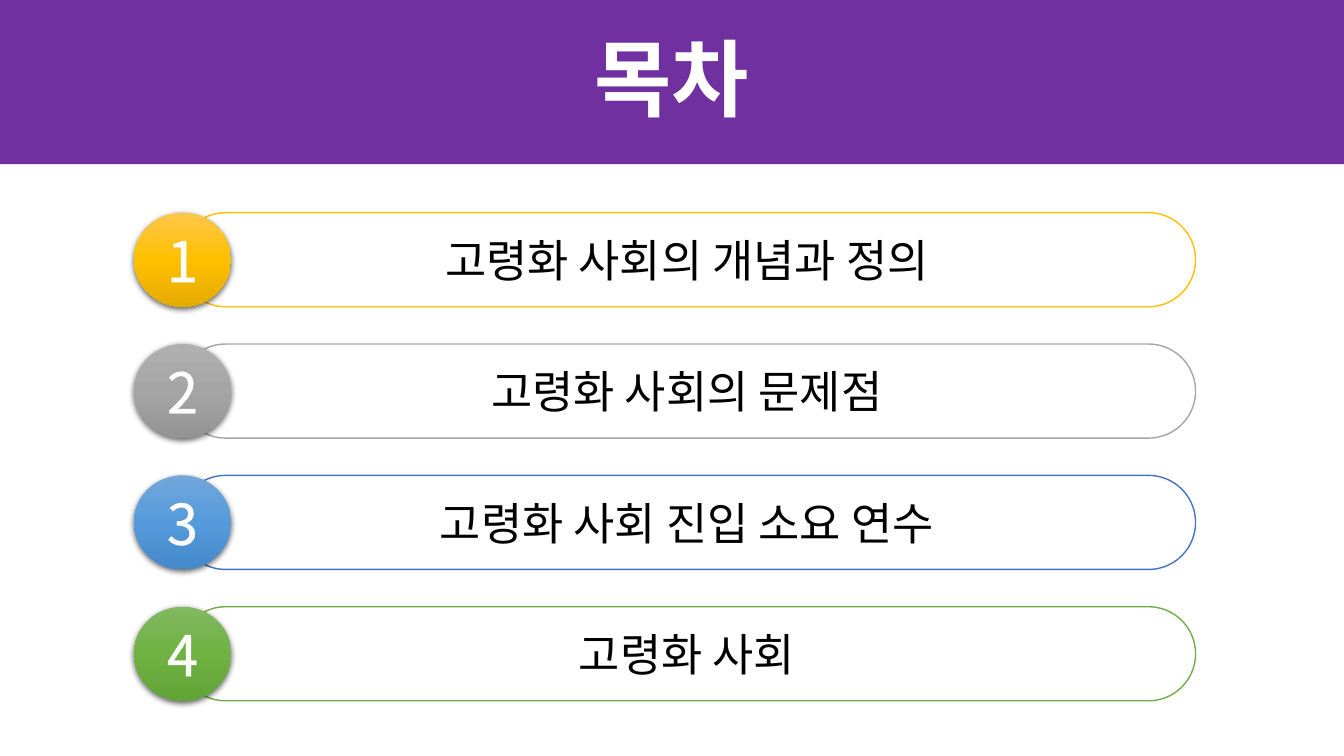
from lxml import etree
from pptx import Presentation
from pptx.dml.color import RGBColor
from pptx.enum.shapes import MSO_SHAPE as SHAPE
from pptx.enum.text import MSO_ANCHOR as ANCHOR, PP_ALIGN as ALIGN
from pptx.oxml import parse_xml
from pptx.oxml.ns import nsdecls, qn
from pptx.util import Cm, Pt

FONT = "Noto Sans CJK KR"
WHITE = RGBColor(0xFF, 0xFF, 0xFF)
BLACK = RGBColor(0x00, 0x00, 0x00)
PURPLE = RGBColor(0x70, 0x30, 0xA0)
GOLD = RGBColor(0xFF, 0xC0, 0x00)
GRAY = RGBColor(0xA5, 0xA5, 0xA5)
BLUE = RGBColor(0x44, 0x72, 0xC4)
GREEN = RGBColor(0x70, 0xAD, 0x47)
GOLD_BALL = RGBColor(0xFF, 0xC6, 0x4B), GOLD, RGBColor(0xE3, 0xAB, 0x00)
GRAY_BALL = RGBColor(0xAF, 0xAF, 0xAF), GRAY, RGBColor(0x93, 0x93, 0x93)
BLUE_BALL = (RGBColor(0x71, 0xA6, 0xDB), RGBColor(0x55, 0x9B, 0xDB),
             RGBColor(0x44, 0x8A, 0xCA))
GREEN_BALL = (RGBColor(0x81, 0xB8, 0x61), RGBColor(0x6F, 0xB2, 0x42),
              RGBColor(0x62, 0xA3, 0x36))

# Topic, pill outline, ball gradient
TOPICS = [
    ("고령화 사회의 개념과 정의", GOLD, GOLD_BALL),
    ("고령화 사회의 문제점", GRAY, GRAY_BALL),
    ("고령화 사회 진입 소요 연수", BLUE, BLUE_BALL),
    ("고령화 사회", GREEN, GREEN_BALL),
]


def add_text(sp, text, color, **fmt):
    tf = sp.text_frame
    tf.word_wrap = True
    tf.vertical_anchor = ANCHOR.MIDDLE
    p = tf.paragraphs[0]
    p.alignment = ALIGN.CENTER
    r = p.add_run()
    r.text = text
    for name, value in {"name": FONT, **fmt}.items():
        setattr(r.font, name, value)
    r.font.color.rgb = color
    rPr = r.font._element
    etree.SubElement(rPr, qn("a:ea")).set("typeface", FONT)
    return p, rPr


def add_shape(s, kind, box, fill=None, line=None):
    sp = s.shapes.add_shape(kind, *(Cm(v) for v in box))
    sp.shadow.inherit = False
    if fill is not None:
        sp.fill.solid()
        sp.fill.fore_color.rgb = fill
    if line is None:
        sp.line.fill.background()
    else:
        sp.line.color.rgb = line
        sp.line.width = Pt(1)
    return sp


def add_header(s, x, y, w, h):
    add_shape(s, SHAPE.RECTANGLE, (x, y, w, h), PURPLE)
    title = s.shapes.add_textbox(Cm(x + 2.33), Cm(y + 0.26), Cm(w - 4.66), Cm(3.68))
    p, _ = add_text(title, "목차", WHITE, size=Pt(60), bold=True)
    p.line_spacing = 0.9


def style_ball(ball, colors):
    # Vertical three-stop gradient and a soft shadow below
    stops = "".join(
        f'<a:gs pos="{i * 50000}"><a:srgbClr val="{c}"/></a:gs>'
        for i, c in enumerate(colors))
    spPr = ball._element.spPr
    spPr.find(qn("a:prstGeom")).addnext(parse_xml(
        f'<a:gradFill {nsdecls("a")} rotWithShape="1"><a:gsLst>{stops}</a:gsLst>'
        '<a:lin ang="5400000" scaled="0"/></a:gradFill>'))
    spPr.find(qn("a:effectLst")).append(parse_xml(
        f'<a:outerShdw {nsdecls("a")} blurRad="{Pt(4.5)}" dist="{Pt(1.5)}" '
        'dir="5400000" algn="ctr" rotWithShape="0"><a:srgbClr val="000000">'
        '<a:alpha val="63000"/></a:srgbClr></a:outerShdw>'))


def add_topic(s, number, topic, line, colors, x, y, w, h):
    # Pill with the topic
    pill = add_shape(s, SHAPE.ROUNDED_RECTANGLE, (x + 1.12, y, w - 1.12, h), WHITE, line)
    pill.adjustments[0] = 0.5
    add_text(pill, topic, BLACK, size=Pt(32))
    # Numbered ball over its left end
    ball = add_shape(s, SHAPE.OVAL, (x, y, 2.44, h))
    style_ball(ball, colors)
    _, rPr = add_text(ball, str(number), WHITE, size=Pt(40))
    rPr.insert(0, parse_xml(
        f'<a:ln {nsdecls("a")} w="{Pt(1.45)}"><a:solidFill>'
        f'<a:srgbClr val="{WHITE}"/></a:solidFill></a:ln>'))


def add_contents(s, x, y, w, h):
    row_h = 2.37
    pitch = (h - row_h) / (len(TOPICS) - 1)
    for i, (topic, line, colors) in enumerate(TOPICS):
        add_topic(s, i + 1, topic, line, colors, x, y + i * pitch, w, row_h)


def main():
    prs = Presentation()
    prs.slide_width, prs.slide_height = Cm(33.87), Cm(19.05)
    s = prs.slides.add_slide(prs.slide_layouts[6])
    add_header(s, 0, 0, 33.87, 4.14)
    add_contents(s, 3.38, 5.36, 26.75, 12.3)
    prs.save("out.pptx")


if __name__ == "__main__":
    main()
